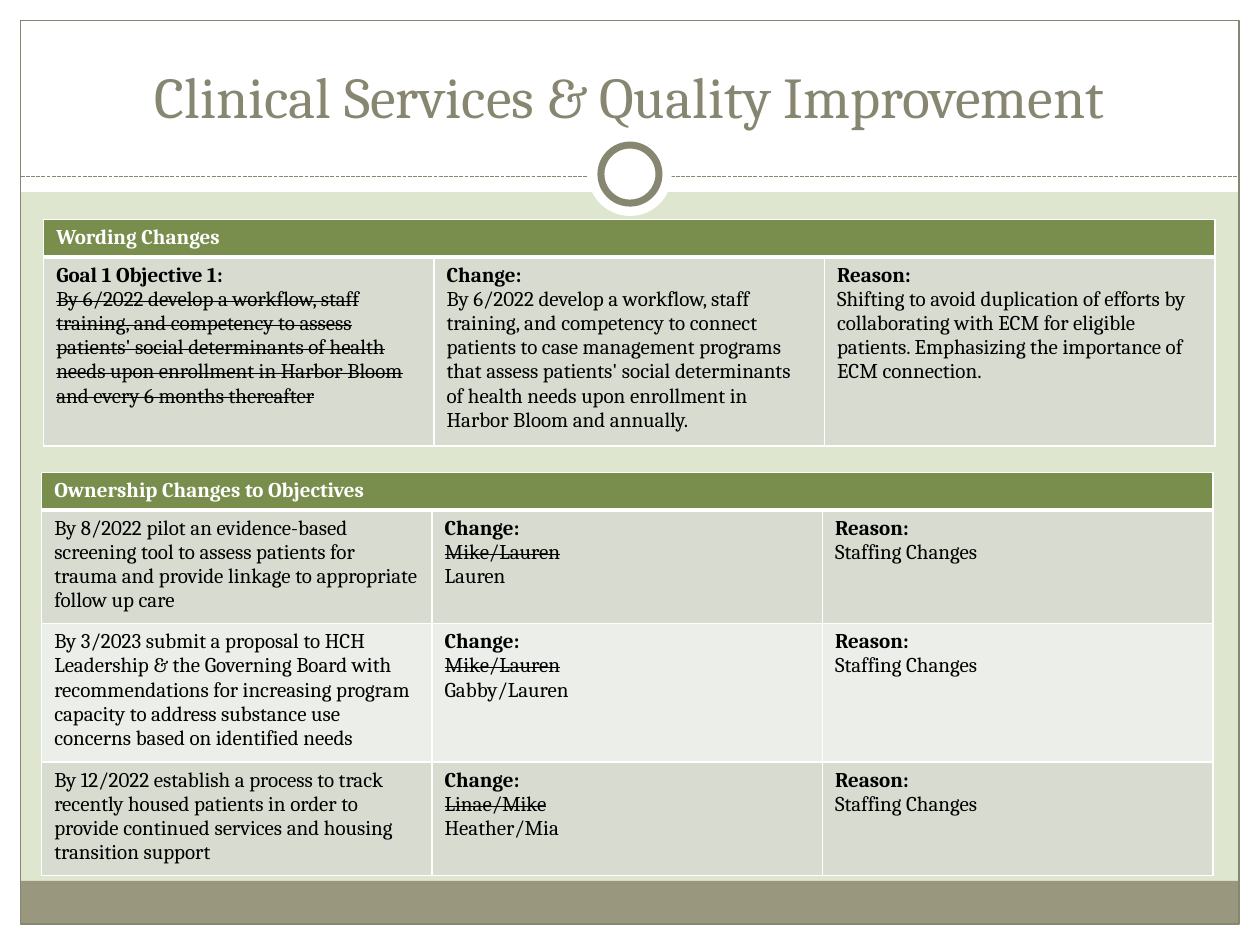
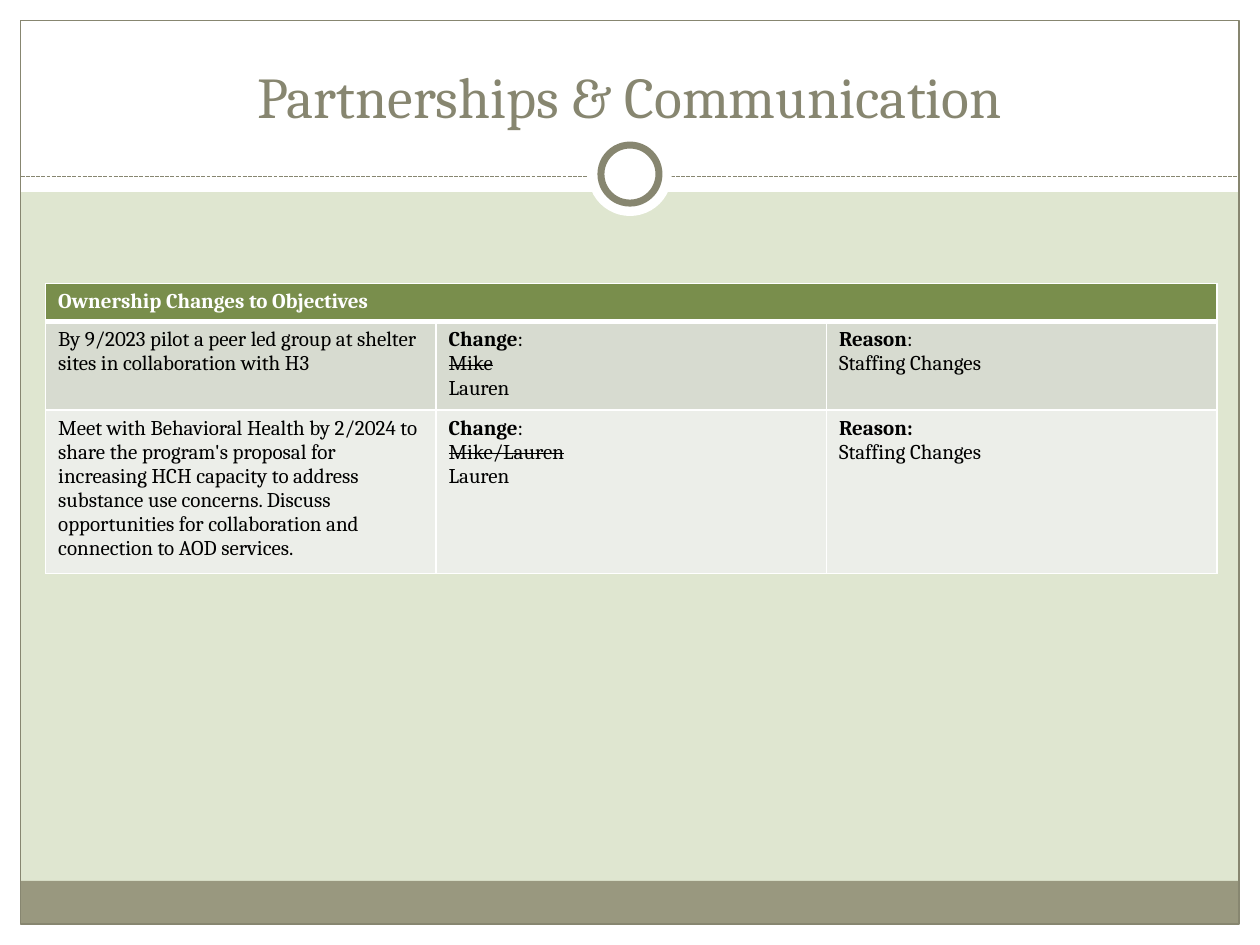
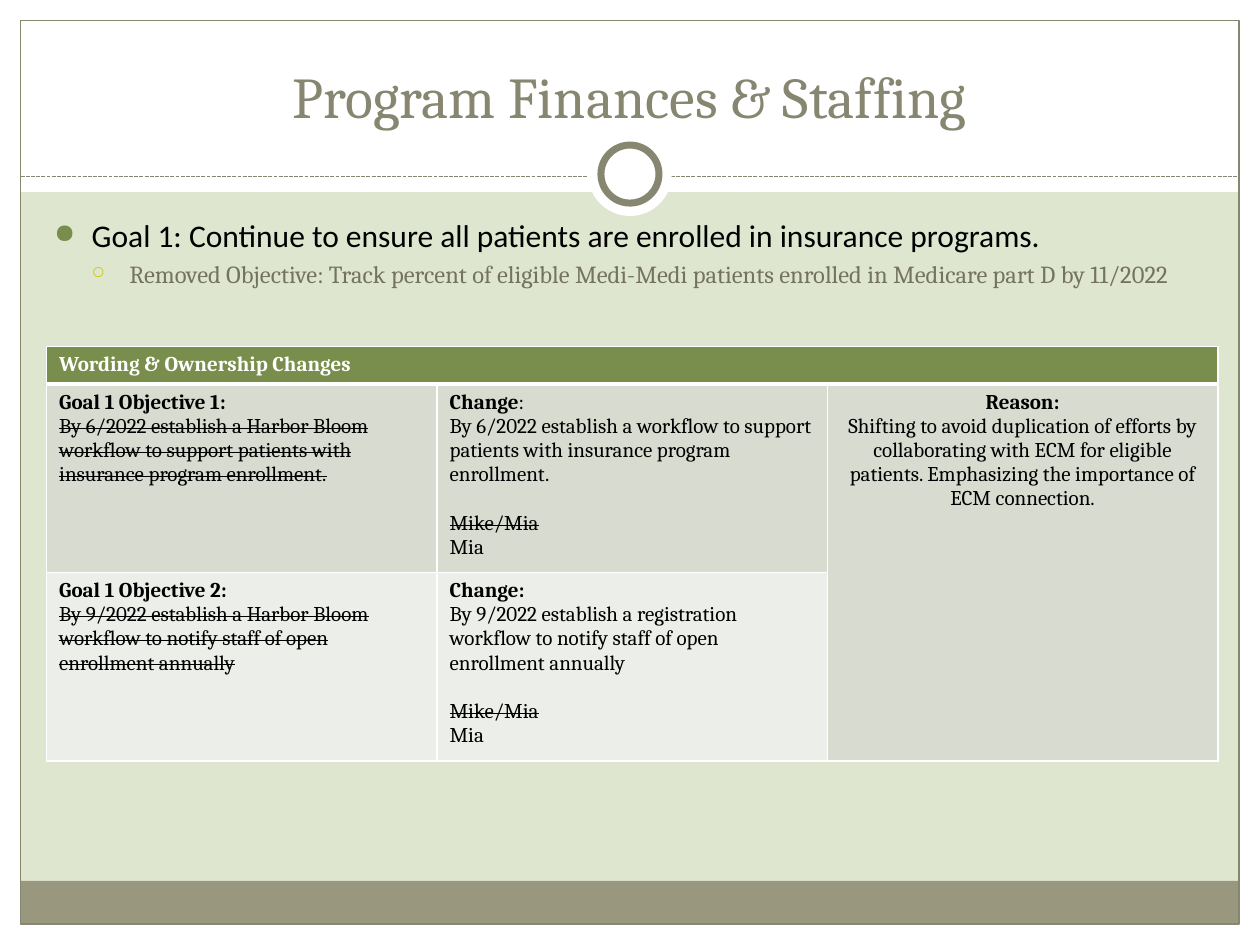
from dataclasses import dataclass

from pptx import Presentation
from pptx.dml.color import RGBColor
from pptx.enum.dml import MSO_LINE
from pptx.enum.shapes import MSO_CONNECTOR, MSO_SHAPE
from pptx.enum.text import MSO_ANCHOR, PP_ALIGN
from pptx.oxml.ns import qn
from pptx.util import Cm, Pt
from lxml.etree import SubElement


@dataclass(frozen=True)
class Theme:
    """Colours, fonts and sizes shared by every slide."""
    background: str = "DFE6D0"
    white: str = "FFFFFF"
    black: str = "000000"
    accent: str = "878670"
    footer: str = "99987F"
    header: str = "798E4C"
    bands: tuple = ("D7DBD0", "ECEEE9")
    goal_bullet: str = "798E4C"
    objective_bullet: str = "CFC60D"
    objective_text: str = "74735D"
    serif: str = "Cambria"
    sans: str = "Calibri"
    title_size: float = 33
    goal_size: float = 18
    objective_size: float = 14
    table_size: float = 12


@dataclass
class Entry:
    """One paragraph of a table cell, as (text, style) runs."""
    runs: list
    space_before: float = 0
    alignment: PP_ALIGN = PP_ALIGN.LEFT


THEME = Theme()
WIDTH, HEIGHT, MARGIN = 25.4, 19.05, 0.42
COLUMN_WIDTH = 7.87
LINE_HEIGHT, CELL_PADDING = 0.49, 0.25


def plain(text, **options):
    """Return a regular paragraph."""
    return Entry([(text, "plain")], **options)


def label(text, **options):
    """Return a bold paragraph."""
    return Entry([(text, "bold")], **options)


def struck(text, **options):
    """Return a struck-through paragraph."""
    return Entry([(text, "struck")], **options)


def half_label(word):
    """Return a bold word followed by a regular colon."""
    return Entry([(word, "bold"), (":", "plain")])


def staffing(heading=None):
    """Return the cell that gives staffing as the reason."""
    return [heading or label("Reason:"), plain("Staffing Changes")]


def owners(before, after, heading=None):
    """Return the cell that shows a change of owner."""
    return [heading or label("Change:"), struck(before), plain(after)]


def apply_format(target, values):
    """Set each named attribute on the target."""
    for name, value in values.items():
        setattr(target, name, value)


def add_run(paragraph, text, size, color, font=THEME.serif, style="plain"):
    """Add one formatted run to a paragraph."""
    run = paragraph.add_run()
    run.text = text
    apply_format(run.font, {"name": font, "size": Pt(size), "bold": style == "bold"})
    run.font.color.rgb = RGBColor.from_string(color)
    if style == "struck":
        run.font._element.set("strike", "sngStrike")


def add_panel(slide, kind, left, top, width, height, fill=None, line=None, weight=0.75):
    """Add a preset shape with an optional fill and outline."""
    shape = slide.shapes.add_shape(kind, Cm(left), Cm(top), Cm(width), Cm(height))
    shape.shadow.inherit = False
    if fill:
        shape.fill.solid()
        shape.fill.fore_color.rgb = RGBColor.from_string(fill)
    else:
        shape.fill.background()
    if line:
        shape.line.color.rgb = RGBColor.from_string(line)
        shape.line.width = Pt(weight)
    else:
        shape.line.fill.background()


def add_circle(slide, diameter, **options):
    """Add a circle at the middle of the divider."""
    add_panel(slide, MSO_SHAPE.OVAL, WIDTH / 2 - diameter / 2, 3.51 - diameter / 2,
              diameter, diameter, **options)


def add_divider(slide):
    """Add the dashed line under the title."""
    divider = slide.shapes.add_connector(
        MSO_CONNECTOR.STRAIGHT, Cm(MARGIN), Cm(3.56), Cm(WIDTH - MARGIN), Cm(3.56))
    divider.line.color.rgb = RGBColor.from_string(THEME.accent)
    apply_format(divider.line, {"width": Pt(0.75), "dash_style": MSO_LINE.SQUARE_DOT})
    SubElement(divider._element.spPr, qn("a:effectLst"))


def add_text_box(slide, left, top, width, height, anchor):
    """Add an empty wrapping text box and return its frame."""
    box = slide.shapes.add_textbox(Cm(left), Cm(top), Cm(width), Cm(height))
    apply_format(box.text_frame, {"word_wrap": True, "vertical_anchor": anchor})
    return box.text_frame


def add_base_slide(presentation, title):
    """Add a slide with the shared bands, frame, ring and title."""
    slide = presentation.slides.add_slide(presentation.slide_layouts[6])
    slide.background.fill.solid()
    slide.background.fill.fore_color.rgb = RGBColor.from_string(THEME.background)
    bands = [
        (0, HEIGHT - MARGIN, WIDTH, MARGIN, THEME.white),
        (0, 0, WIDTH, 3.87, THEME.white),
        (0, 0, MARGIN, HEIGHT, THEME.white),
        (WIDTH - MARGIN, 0, MARGIN, HEIGHT, THEME.white),
        (MARGIN, 17.76, WIDTH - 2 * MARGIN, 0.87, THEME.footer),
    ]
    for left, top, width, height, fill in bands:
        add_panel(slide, MSO_SHAPE.RECTANGLE, left, top, width, height, fill)
    add_panel(slide, MSO_SHAPE.RECTANGLE, MARGIN, MARGIN, WIDTH - 2 * MARGIN,
              HEIGHT - 2 * MARGIN, line=THEME.accent)
    add_divider(slide)
    add_circle(slide, 1.69, fill=THEME.white)
    add_circle(slide, 1.17, fill=THEME.white, line=THEME.accent, weight=4)
    frame = add_text_box(slide, 0.84, 0.64, 23.7, 2.11, MSO_ANCHOR.BOTTOM)
    frame.paragraphs[0].alignment = PP_ALIGN.CENTER
    add_run(frame.paragraphs[0], title, THEME.title_size, THEME.accent)
    return slide


def add_bullet(paragraph, symbol, color, percent, indent):
    """Give a paragraph a coloured hanging bullet."""
    properties = paragraph._p.get_or_add_pPr()
    properties.set("marL", str(Cm(indent)))
    properties.set("indent", str(-Cm(0.76)))
    bullet_color = SubElement(properties, qn("a:buClr"))
    SubElement(bullet_color, qn("a:srgbClr"), val=color)
    SubElement(properties, qn("a:buSzPct"), val=str(percent * 1000))
    SubElement(properties, qn("a:buChar"), char=symbol)


def add_goal(slide, goal, objective):
    """Add a goal bullet with its objective below it."""
    frame = add_text_box(slide, 0.84, 4.24, 23.62, 12.7, MSO_ANCHOR.TOP)
    levels = [
        (goal, "●", THEME.goal_bullet, 85, 0.76, THEME.goal_size, THEME.black, THEME.sans),
        (objective, "○", THEME.objective_bullet, 70, 1.52, THEME.objective_size,
         THEME.objective_text, THEME.serif),
    ]
    for level, (text, symbol, bullet, percent, indent, size, color, font) in enumerate(levels):
        paragraph = frame.add_paragraph() if level else frame.paragraphs[0]
        apply_format(paragraph, {"level": level, "space_before": Pt(size * 0.2)})
        add_bullet(paragraph, symbol, bullet, percent, indent)
        add_run(paragraph, text, size, color, font)


def style_cell(cell, fill, top=1, bottom=1):
    """Set the fill and white borders of a cell."""
    cell.fill.solid()
    cell.fill.fore_color.rgb = RGBColor.from_string(fill)
    properties = cell._tc.get_or_add_tcPr()
    widths = {"a:lnL": 1, "a:lnR": 1, "a:lnT": top, "a:lnB": bottom}
    for position, (tag, width) in enumerate(widths.items()):
        border = SubElement(properties, qn(tag), w=str(Pt(width)))
        SubElement(SubElement(border, qn("a:solidFill")), qn("a:srgbClr"), val=THEME.white)
        properties.insert(position, border)


def fill_cell(cell, entries, color):
    """Write the paragraphs of a cell."""
    for index, entry in enumerate(entries):
        paragraph = cell.text_frame.add_paragraph() if index else cell.text_frame.paragraphs[0]
        apply_format(paragraph, {"alignment": entry.alignment,
                                 "space_before": Pt(entry.space_before)})
        for text, style in entry.runs:
            add_run(paragraph, text, THEME.table_size, color, style=style)


def add_change_table(slide, left, top, heading, rows, shared_reason=False):
    """Add a table of changes from (line count, cells) rows."""
    heights = [0.76] + [CELL_PADDING + LINE_HEIGHT * lines for lines, _ in rows]
    frame = slide.shapes.add_table(len(heights), 3, Cm(left), Cm(top),
                                   Cm(3 * COLUMN_WIDTH), Cm(sum(heights)))
    table = frame.table
    apply_format(table, {"first_row": False, "horz_banding": False})
    for column in table.columns:
        column.width = Cm(COLUMN_WIDTH)
    for row, height in zip(table.rows, heights):
        row.height = Cm(height)
    for cell in table.rows[0].cells:
        style_cell(cell, THEME.header, bottom=3)
    table.cell(0, 0).merge(table.cell(0, 2))
    fill_cell(table.cell(0, 0), [label(heading)], THEME.white)
    for index, (_, cells) in enumerate(rows):
        for cell in table.rows[index + 1].cells:
            style_cell(cell, THEME.bands[index % 2], top=1 if index else 3)
        for column, entries in enumerate(cells):
            fill_cell(table.cell(index + 1, column), entries, THEME.black)
    if shared_reason:
        table.cell(1, 2).merge(table.cell(len(rows), 2))


REASON = ("Shifting to avoid duplication of efforts by collaborating with ECM for eligible "
          "patients. Emphasizing the importance of ECM connection.")


def build_clinical(presentation):
    """Build the clinical services slide."""
    slide = add_base_slide(presentation, "Clinical Services & Quality Improvement")
    add_change_table(slide, 0.88, 4.42, "Wording Changes", [
        (7, [
            [label("Goal 1 Objective 1:"),
             struck("By 6/2022 develop a workflow, staff training, and competency to assess "
                    "patients' social determinants of health needs upon enrollment in "
                    "Harbor Bloom and every 6 months thereafter")],
            [label("Change:"),
             plain("By 6/2022 develop a workflow, staff training, and competency to connect "
                   "patients to case management programs that assess patients' social "
                   "determinants of health needs upon enrollment in Harbor Bloom and annually.")],
            [label("Reason:"), plain(REASON)],
        ]),
    ])
    add_change_table(slide, 0.84, 9.52, "Ownership Changes to Objectives", [
        (4, [
            [plain("By 8/2022 pilot an evidence-based screening tool to assess patients for "
                   "trauma and provide linkage to appropriate follow up care")],
            owners("Mike/Lauren", "Lauren"), staffing(),
        ]),
        (5, [
            [plain("By 3/2023 submit a proposal to HCH Leadership & the Governing Board with "
                   "recommendations for increasing program capacity to address substance use "
                   "concerns based on identified needs")],
            owners("Mike/Lauren", "Gabby/Lauren"), staffing(),
        ]),
        (4, [
            [plain("By 12/2022 establish a process to track recently housed patients in order "
                   "to provide continued services and housing transition support")],
            owners("Linae/Mike", "Heather/Mia"), staffing(),
        ]),
    ])


def build_partnerships(presentation):
    """Build the partnerships slide."""
    slide = add_base_slide(presentation, "Partnerships & Communication")
    add_change_table(slide, 0.92, 5.72, "Ownership Changes to Objectives", [
        (3, [
            [plain("By 9/2023 pilot a peer led group at shelter sites in collaboration with H3")],
            owners("Mike", "Lauren", half_label("Change")), staffing(half_label("Reason")),
        ]),
        (6, [
            [plain("Meet with Behavioral Health by 2/2024 to share the program's proposal for "
                   "increasing HCH capacity to address substance use concerns. Discuss "
                   "opportunities for collaboration and connection to AOD services.")],
            owners("Mike/Lauren", "Lauren", half_label("Change")), staffing(),
        ]),
    ])


def build_finances(presentation):
    """Build the finances and staffing slide."""
    slide = add_base_slide(presentation, "Program Finances & Staffing")
    add_goal(slide,
             "Goal 1: Continue to ensure all patients are enrolled in insurance programs.",
             "Removed Objective: Track percent of eligible Medi-Medi patients enrolled in "
             "Medicare part D by 11/2022")
    new_owner = [struck("Mike/Mia", space_before=14), plain("Mia")]
    centered = {"alignment": PP_ALIGN.CENTER}
    add_change_table(slide, 0.94, 6.98, "Wording & Ownership Changes", [
        (7, [
            [label("Goal 1 Objective 1:"),
             struck("By 6/2022 establish a Harbor Bloom workflow to support patients with "
                    "insurance program enrollment.")],
            [half_label("Change"),
             plain("By 6/2022 establish a workflow to support patients with insurance program "
                   "enrollment."), *new_owner],
            [label("Reason:", **centered), plain(REASON, **centered)],
        ]),
        (7, [
            [label("Goal 1 Objective 2:"),
             struck("By 9/2022 establish a Harbor Bloom workflow to notify staff of open "
                    "enrollment annually")],
            [label("Change:"),
             plain("By 9/2022 establish a registration workflow to notify staff of open "
                   "enrollment annually"), *new_owner],
        ]),
    ], shared_reason=True)


def main():
    """Build and save the presentation."""
    presentation = Presentation()
    apply_format(presentation, {"slide_width": Cm(WIDTH), "slide_height": Cm(HEIGHT)})
    for build in (build_clinical, build_partnerships, build_finances):
        build(presentation)
    presentation.save("out.pptx")


if __name__ == "__main__":
    main()
